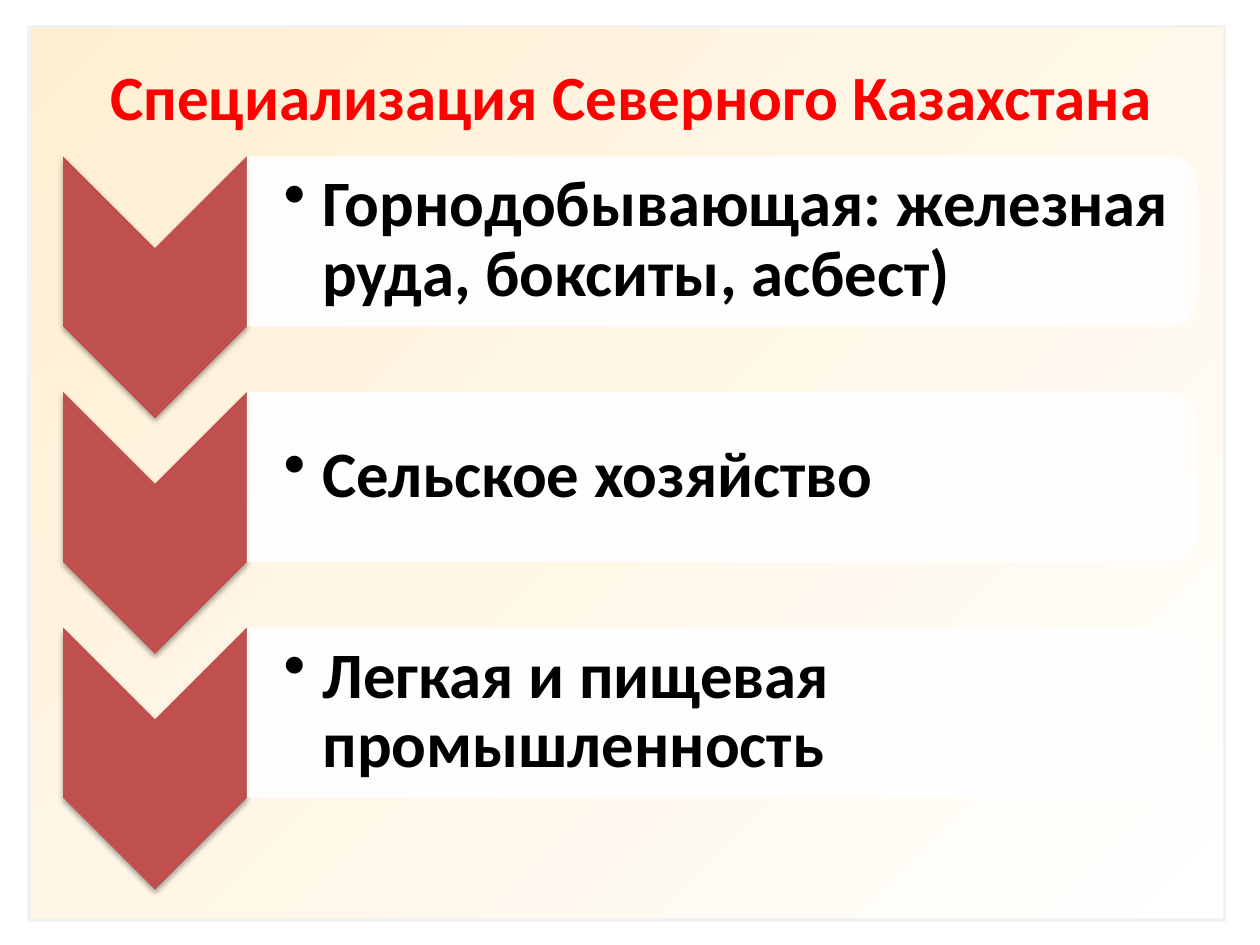
import copy

import pptx
import pptx.util
import pptx.dml.color
import pptx.enum.shapes
import pptx.enum.text
import pptx.oxml
import pptx.oxml.ns
from lxml import etree

Inches = pptx.util.Inches
SHAPE = pptx.enum.shapes.MSO_SHAPE
qn = pptx.oxml.ns.qn

COLORS = {
    "title": "FF0000", "text": "000000", "chevron": "C0504D",
    "panel": "FFFFFF", "frame": "F2F2F2",
}
GRADIENT = [(0, "FFEFD1"), (0.46, "FFF6E6"), (1, "FFFFFF")]
BRANCHES = [
    "Горнодобывающая: железная руда, бокситы, асбест)",
    "Сельское хозяйство",
    "Легкая и пищевая промышленность",
]
FIRST_TOP, STEP = 1.24, 1.87
SHADOW = (
    '<a:effectLst xmlns:a="http://schemas.openxmlformats.org/drawingml/2006/main">'
    '<a:outerShdw blurRad="40000" dist="23000" dir="5400000" rotWithShape="0">'
    '<a:srgbClr val="000000"><a:alpha val="35000"/></a:srgbClr>'
    '</a:outerShdw></a:effectLst>'
)


def rgb(name):
    return pptx.dml.color.RGBColor.from_string(COLORS[name])


def set_attrs(obj, values):
    for name, value in values.items():
        setattr(obj, name, value)


def add_background(s):
    sp = s.shapes.add_shape(SHAPE.RECTANGLE, Inches(0.23), Inches(0.21),
                            Inches(9.49), Inches(7.09))
    sp.shadow.inherit = False
    sp.line.color.rgb = rgb("frame")
    sp.line.width = pptx.util.Pt(2)
    sp.fill.gradient()
    sp.fill.gradient_angle = 315
    # Third gradient stop
    stops = sp.fill.gradient_stops
    gs_list = sp._element.spPr.find(".//" + qn("a:gsLst"))
    gs_list.append(copy.deepcopy(gs_list[-1]))
    for stop, (position, color) in zip(stops, GRADIENT):
        stop.position = position
        stop.color.rgb = pptx.dml.color.RGBColor.from_string(color)
    for stop, (position, color) in zip(sp.fill.gradient_stops, GRADIENT):
        stop.position = position
        stop.color.rgb = pptx.dml.color.RGBColor.from_string(color)


def add_turned_shape(s, kind, left, top, width, height, color):
    """Add a shape turned by 90 degrees that fills the given visible box."""
    sp = s.shapes.add_shape(kind, Inches(left + (width - height) / 2),
                            Inches(top + (height - width) / 2),
                            Inches(height), Inches(width))
    sp.rotation = 90
    sp.shadow.inherit = False
    sp.fill.solid()
    sp.fill.fore_color.rgb = rgb(color)
    sp.line.fill.background()
    return sp


def add_chevron(s, top):
    sp = add_turned_shape(s, SHAPE.CHEVRON, 0.5, top, 1.46, 2.08, "chevron")
    spPr = sp._element.spPr
    spPr.replace(spPr.find(qn("a:effectLst")), pptx.oxml.parse_xml(SHADOW))


def add_panel(s, top):
    sp = add_turned_shape(s, SHAPE.ROUND_2_SAME_RECTANGLE, 1.96, top, 7.54, 1.35, "panel")
    clr = sp._element.spPr.find(qn("a:solidFill"))[0]
    etree.SubElement(clr, qn("a:alpha")).set("val", "90000")


def add_text(s, box, text, size, color):
    tf = s.shapes.add_textbox(*[Inches(v) for v in box]).text_frame
    set_attrs(tf, {"word_wrap": True,
                   "vertical_anchor": pptx.enum.text.MSO_ANCHOR.MIDDLE})
    p = tf.paragraphs[0]
    r = p.add_run()
    r.text = text
    set_attrs(r.font, {"size": pptx.util.Pt(size), "name": "Calibri", "bold": True})
    r.font.color.rgb = rgb(color)
    return tf, p


def add_title(s):
    tf, p = add_text(s, (0.51, 0.13, 9, 1.25),
                     "Специализация Северного Казахстана", 36, "title")
    p.alignment = pptx.enum.text.PP_ALIGN.CENTER


def add_bullet_text(s, top, text):
    tf, p = add_text(s, (1.96, top, 7.48, 1.22), text, 37, "text")
    inset = Inches(0.03)
    set_attrs(tf, {"margin_left": Inches(0.29), "margin_top": inset,
                   "margin_right": inset, "margin_bottom": inset})
    pPr = p._p.get_or_add_pPr()
    pPr.set("marL", str(Inches(0.31)))
    pPr.set("indent", str(-Inches(0.31)))
    etree.SubElement(pPr, qn("a:buChar")).set("char", "•")
    p.line_spacing = 0.9


def main():
    prs = pptx.Presentation()
    set_attrs(prs, {"slide_width": Inches(10), "slide_height": Inches(7.5)})
    s = prs.slides.add_slide(prs.slide_layouts[6])

    # Frame and heading
    add_background(s)
    add_title(s)

    # One chevron row for each branch of the economy
    for i, branch in enumerate(BRANCHES):
        top = FIRST_TOP + i * STEP
        add_chevron(s, top)
        add_panel(s, top)
        add_bullet_text(s, top + 0.06, branch)

    prs.save("out.pptx")


if __name__ == "__main__":
    main()
